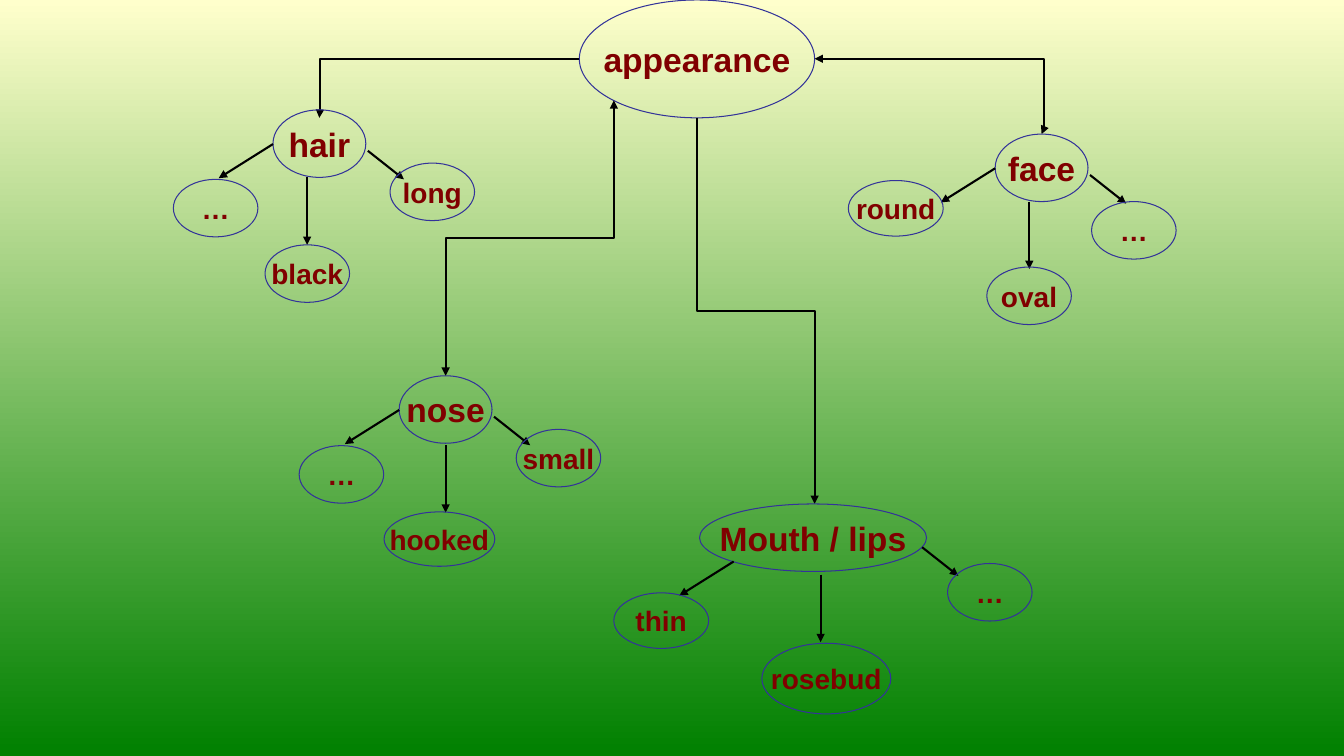
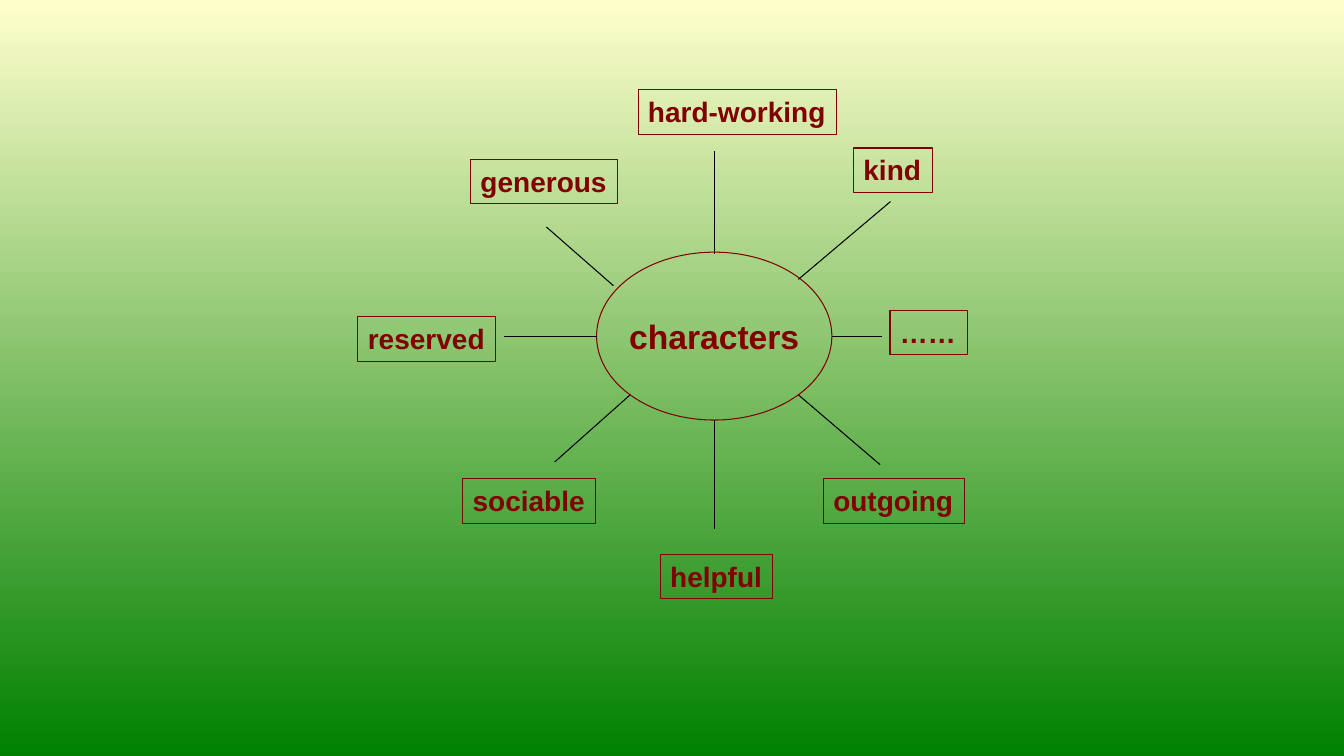
from lxml import etree
from pptx import Presentation
from pptx import util as u
from pptx.dml.color import RGBColor
from pptx.enum import shapes, text
from pptx.oxml.ns import qn

INK = {"top": "FFFFCC", "base": "008000", "word": "800000",
       "oval": "333399", "link": "000000"}
FONT = "Arial"
BIG, SMALL = 24, 20
OVAL = shapes.MSO_SHAPE.OVAL
RECT = shapes.MSO_SHAPE.RECTANGLE
LEAF = (2.13, 1.45)
TOPIC = (2.34, 1.7)
STEPS = [(-1.37, 0.86), (0, 1.7), (0.91, 0.72)]  # left, down and right arrows


def rgb(name):
    return RGBColor.from_string(INK[name])


def paint(master):
    """Give every slide the gradient from cream to green."""
    fill = master.background.fill
    fill.gradient()
    fill.gradient_angle = 270
    for stop, name in zip(fill.gradient_stops, ("top", "base")):
        stop.color.rgb = rgb(name)


def node(slide, kind, word, box, size, line):
    """Draw an outlined shape with one word; box is left, top, width, height."""
    shape = slide.shapes.add_shape(kind, *map(u.Cm, box))
    shape.shadow.inherit = False
    shape.fill.background()
    shape.line.color.rgb = rgb(line)
    shape.line.width = u.Pt(0.75)
    frame = shape.text_frame
    frame.word_wrap = False
    frame.vertical_anchor = text.MSO_ANCHOR.MIDDLE
    para = frame.paragraphs[0]
    para.text = word
    para.alignment = text.PP_ALIGN.CENTER
    font = para.font
    font.name, font.size, font.bold = FONT, u.Pt(size), True
    font.color.rgb = rgb("word")
    return shape


def label(slide, word, box):
    frame = node(slide, RECT, word, box, SMALL, "word").text_frame
    frame.auto_size = text.MSO_AUTO_SIZE.SHAPE_TO_FIT_TEXT
    frame.vertical_anchor = text.MSO_ANCHOR.TOP
    frame.paragraphs[0].alignment = text.PP_ALIGN.LEFT


def link(slide, start, end, width=1.5, ends=("tailEnd",), bent=False):
    kind = shapes.MSO_CONNECTOR.ELBOW if bent else shapes.MSO_CONNECTOR.STRAIGHT
    line = slide.shapes.add_connector(kind, *map(u.Cm, (*start, *end)))
    line.line.color.rgb = rgb("link")
    line.line.width = u.Pt(width)
    for name in ends:
        etree.SubElement(line.line._get_or_add_ln(), qn("a:" + name),
                         type="triangle")
    etree.SubElement(line.element.spPr, qn("a:effectLst"))
    return line


def across(slide, start, end, ratio, ends):
    """Elbow that leaves sideways and turns at a ratio of its width."""
    line = link(slide, start, end, ends=ends, bent=True)
    geom = line.element.spPr.find(qn("a:prstGeom"))
    guides = geom.find(qn("a:avLst"))
    if guides is None:
        guides = etree.SubElement(geom, qn("a:avLst"))
    etree.SubElement(guides, qn("a:gd"), name="adj1",
                     fmla=f"val {round(ratio * 100000)}")


def down(slide, start, end, ends):
    """Elbow that leaves downwards: a sideways one, turned by a quarter."""
    (x1, y1), (x2, y2) = start, end
    midx, midy = (x1 + x2) / 2, (y1 + y2) / 2
    half, rise = (y2 - y1) / 2, abs(x2 - x1) / 2
    side, turn = (1, 90) if x2 < x1 else (-1, 270)
    line = link(slide, (midx - side * half, midy - rise),
                (midx + side * half, midy + rise), ends=ends, bent=True)
    line.element.spPr.find(qn("a:xfrm")).set("rot", str(turn * 60000))


def branch(slide, word, box, starts, leaves):
    """Draw a topic with three arrows and leaves, all placed from its corner."""
    left, top = box[:2]
    node(slide, OVAL, word, box, BIG, "oval")
    for (x, y), (dx, dy) in zip(starts, STEPS):
        x, y = left + x, top + y
        link(slide, (x, y), (x + dx, y + dy))
    for name, x, y, size in leaves:
        node(slide, OVAL, name, (left + x, top + y, *size), SMALL, "oval")


def looks(slide):
    node(slide, OVAL, "appearance", (14.6, 0, 5.93, 2.97), BIG, "oval")
    both, tail = ("headEnd", "tailEnd"), ("tailEnd",)
    across(slide, (20.53, 1.48), (26.25, 3.38), 1.011, both)
    across(slide, (14.6, 1.48), (8.05, 2.97), 0.998, tail)
    down(slide, (15.47, 2.53), (11.23, 9.47), both)
    down(slide, (17.57, 2.97), (20.53, 12.7), tail)

    side = [(0, 0.86), (0.86, 1.7), (2.39, 1.03)]
    branch(slide, "hair", (6.88, 2.77, *TOPIC), side, [
        ("…", -2.51, 1.75, LEAF),
        ("black", -0.2, 3.4, LEAF),
        ("long", 2.95, 1.34, LEAF)])
    branch(slide, "nose", (10.06, 9.47, *TOPIC),
           [side[0], (1.17, 1.75), side[2]], [
        ("…", -2.52, 1.76, LEAF),
        ("hooked", -0.38, 3.43, (2.79, 1.37)),
        ("small", 2.95, 1.35, LEAF)])
    branch(slide, "face", (25.08, 3.38, *TOPIC), side, [
        ("round", -3.7, 1.17, (2.39, 1.4)),
        ("oval", -0.21, 3.35, LEAF),
        ("…", 2.43, 1.7, LEAF)])
    branch(slide, "Mouth / lips", (17.63, 12.7, 5.72, 1.7),
           [(0.86, 1.45), (3.05, 1.78), (5.61, 1.09)], [
        ("thin", -2.16, 2.24, (2.39, 1.4)),
        ("rosebud", 1.57, 3.51, (3.25, 1.78)),
        ("…", 6.25, 1.5, LEAF)])


def traits(slide, midx, midy):
    """Draw the hub and its labels around a middle point."""
    wide, high = 5.93, 4.23
    node(slide, OVAL, "characters",
         (midx - wide / 2, midy - high / 2, wide, high), BIG, "word")
    # word, label left, top and width, spoke start and end
    spokes = [
        ("helpful", -1.36, 5.5, 2.84, (0, 2.12), (0, 4.87)),
        ("sociable", -6.34, 3.6, 3.35, (-2.12, 1.48), (-4.02, 3.17)),
        ("generous", -6.14, -4.46, 3.71, (-4.23, -2.75), (-2.54, -1.27)),
        ("hard-working", -1.92, -6.21, 5, (0, -4.66), (0, -2.07)),
        ("kind", 3.51, -4.74, 1.98, (4.44, -3.39), (2.12, -1.43)),
        ("outgoing", 2.75, 3.6, 3.56, (2.12, 1.48), (4.18, 3.24)),
        ("reserved", -8.98, -0.49, 3.48, (-2.96, 0), (-5.29, 0)),
        ("……", 4.43, -0.65, 1.96, (4.23, 0), (2.96, 0)),
    ]
    for word, x, y, width, start, end in spokes:
        label(slide, word, (midx + x, midy + y, width, 1.12))
        link(slide, (midx + start[0], midy + start[1]),
             (midx + end[0], midy + end[1]), width=0.75, ends=())


def main():
    deck = Presentation()
    deck.slide_width, deck.slide_height = u.Cm(33.87), u.Cm(19.05)
    paint(deck.slide_master)
    blank = deck.slide_layouts[6]
    looks(deck.slides.add_slide(blank))
    traits(deck.slides.add_slide(blank), 18, 8.47)
    deck.save("out.pptx")


if __name__ == "__main__":
    main()
